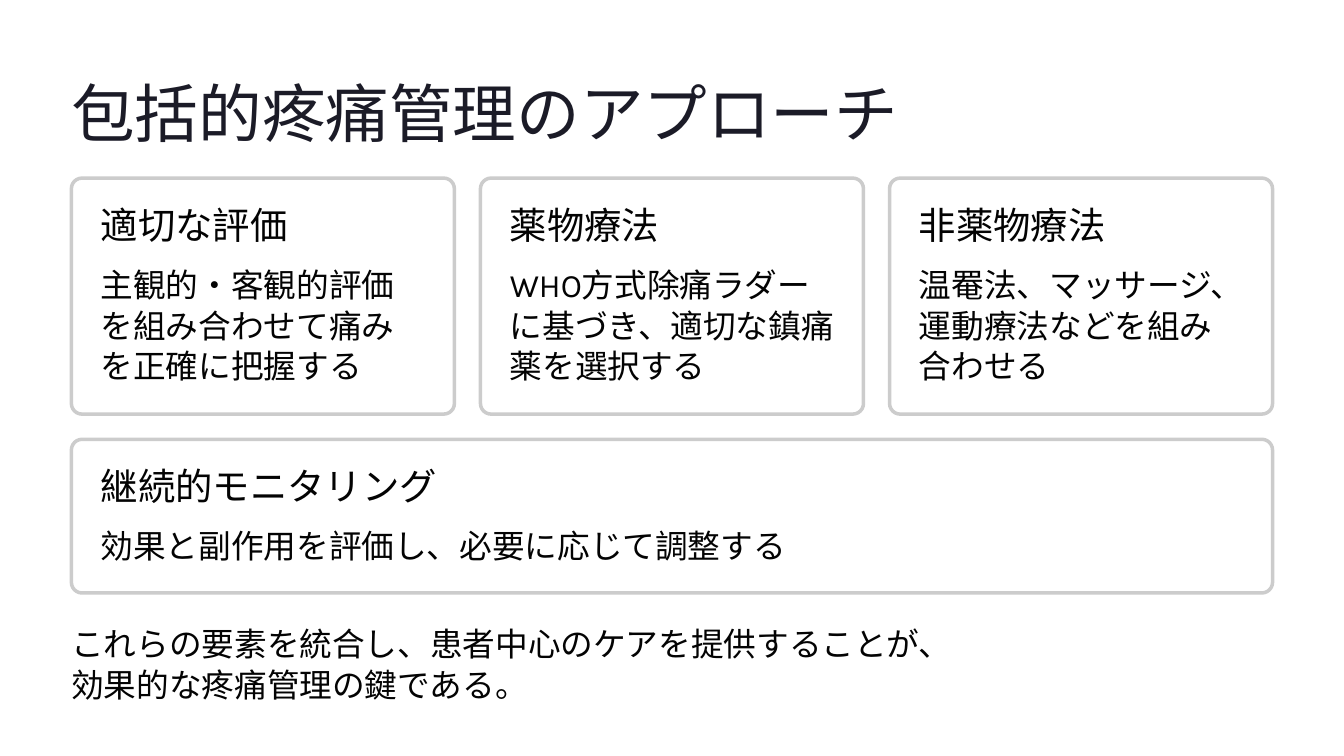
from pptx import Presentation
from pptx.dml.color import RGBColor
from pptx.enum.shapes import MSO_SHAPE
from pptx.util import Inches, Pt

ROUNDED = MSO_SHAPE.ROUNDED_RECTANGLE
COLORS = {"card": "FFFFFF", "border": "CCCCCC", "title": "1B1B27", "text": "030303"}
LEFT, CONTENT_WIDTH = 0.85, 14.3
CARD_WIDTH, CARD_STEP = 4.56, 4.87
PADDING = 0.35

presentation = Presentation()
presentation.slide_width = Inches(16)
presentation.slide_height = Inches(9)
slide = presentation.slides.add_slide(presentation.slide_layouts[6])


def add_text(left, top, width, height, text, font, size, spacing, color="text"):
    shape = slide.shapes.add_textbox(Inches(left), Inches(top), Inches(width), Inches(height))
    frame = shape.text_frame
    frame.margin_left = frame.margin_right = frame.margin_top = frame.margin_bottom = 0
    frame.word_wrap = True
    frame.text = text
    for paragraph in frame.paragraphs:
        paragraph.line_spacing = Pt(spacing)
        for run in paragraph.runs:
            run.font.name = font
            run.font.size = Pt(size)
            run.font.color.rgb = RGBColor.from_string(COLORS[color])


def add_card(left, top, width, height, radius, heading, body):
    shape = slide.shapes.add_shape(ROUNDED, Inches(left), Inches(top), Inches(width), Inches(height))
    shape.adjustments[0] = radius
    shape.shadow.inherit = False
    shape.fill.solid()
    shape.fill.fore_color.rgb = RGBColor.from_string(COLORS["card"])
    shape.line.color.rgb = RGBColor.from_string(COLORS["border"])
    shape.line.width = Pt(3)
    text_left, text_width = left + PADDING, width - 2 * PADDING
    add_text(text_left, top + PADDING, text_width, 0.47, heading, "Inter", 32, 34)
    add_text(text_left, top + 1.01, text_width, height - 1.35, body, "Karla", 28, 35)


add_text(LEFT, 0.84, CONTENT_WIDTH, 0.95, "包括的疼痛管理のアプローチ", "Inter", 54.5, 68, "title")

approaches = [
    ("適切な評価", "主観的・客観的評価を組み合わせて痛みを正確に把握する"),
    ("薬物療法", "WHO方式除痛ラダーに基づき、適切な鎮痛薬を選択する"),
    ("非薬物療法", "温罨法、マッサージ、運動療法などを組み合わせる"),
]
for index, (heading, body) in enumerate(approaches):
    add_card(LEFT + index * CARD_STEP, 2.12, CARD_WIDTH, 2.81, 0.045, heading, body)

add_card(LEFT, 5.23, CONTENT_WIDTH, 1.83, 0.07,
         "継続的モニタリング", "効果と副作用を評価し、必要に応じて調整する")

add_text(LEFT, 7.41, CONTENT_WIDTH, 0.97,
         "これらの要素を統合し、患者中心のケアを提供することが、\n効果的な疼痛管理の鍵である。",
         "Karla", 28, 35)

presentation.save("out.pptx")
